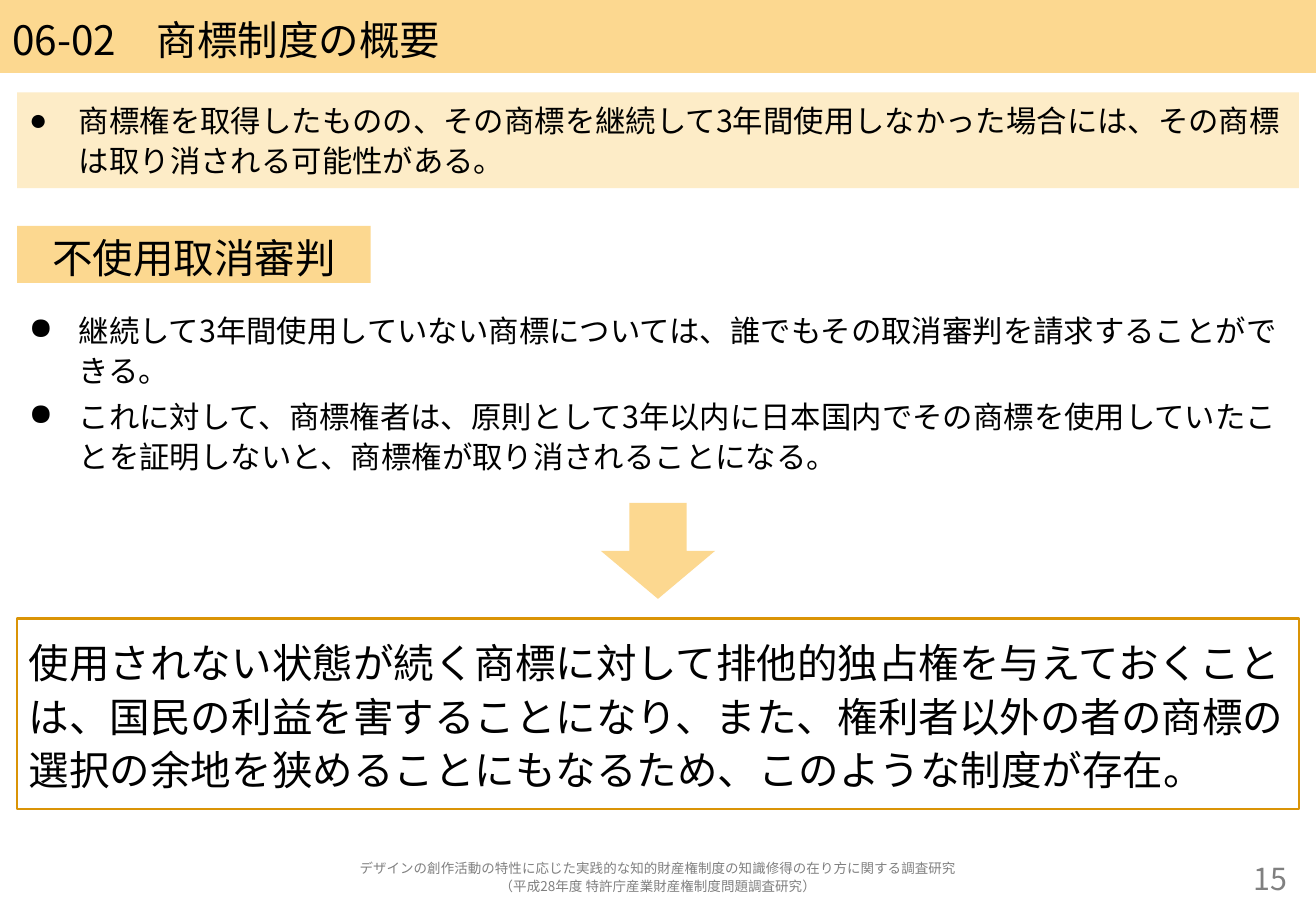
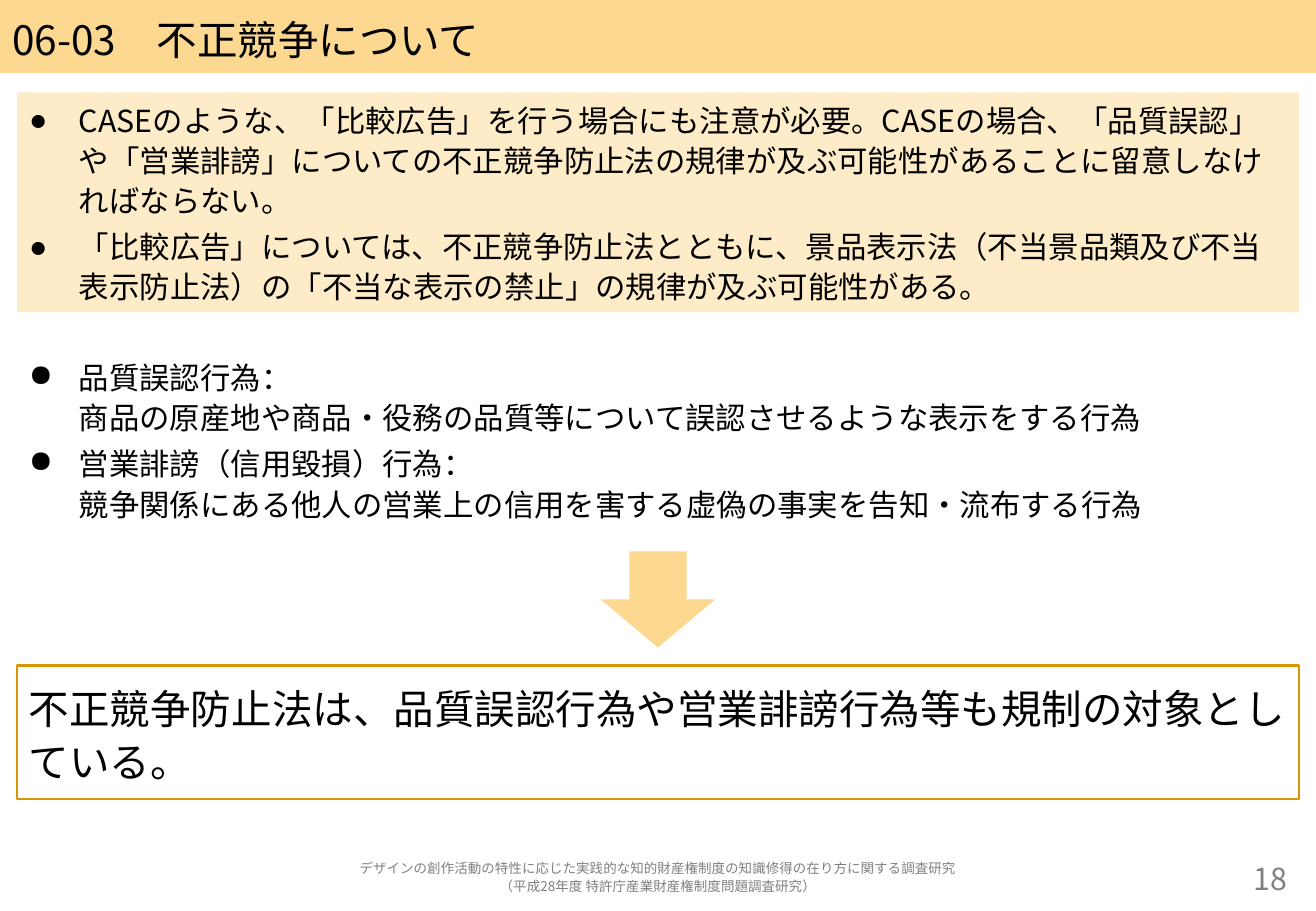
from dataclasses import dataclass

from lxml import etree
from pptx import Presentation
from pptx.dml.color import RGBColor
from pptx.enum.shapes import MSO_SHAPE
from pptx.enum.text import MSO_ANCHOR, MSO_AUTO_SIZE, PP_ALIGN
from pptx.oxml.ns import qn
from pptx.util import Inches, Pt

RECT, ARROW = MSO_SHAPE.RECTANGLE, MSO_SHAPE.DOWN_ARROW
TOP, MIDDLE = MSO_ANCHOR.TOP, MSO_ANCHOR.MIDDLE
LEFT, CENTER, RIGHT = PP_ALIGN.LEFT, PP_ALIGN.CENTER, PP_ALIGN.RIGHT
NO_FIT = MSO_AUTO_SIZE.NONE


@dataclass(frozen=True)
class Theme:
    font: str = "Noto Sans CJK JP"
    band: RGBColor = RGBColor(0xFC, 0xD8, 0x90)
    pale: RGBColor = RGBColor(0xFD, 0xEC, 0xC7)
    edge: RGBColor = RGBColor(0xDA, 0x94, 0x06)
    ink: RGBColor = RGBColor(0, 0, 0)
    gray: RGBColor = RGBColor(0x80, 0x80, 0x80)
    large: int = 24
    body: int = 18
    small: int = 8
    lines: float = 1.1


theme = Theme()
WIDE, HIGH = 10.83, 7.5
EDGE = 0.14
SPAN = WIDE - 2 * EDGE
INDENT = Inches(0.41)
FOOT = [
    "デザインの創作活動の特性に応じた実践的な知的財産権制度の知識修得の在り方に関する調査研究",
    "（平成28年度 特許庁産業財産権制度問題調査研究）",
]

# Tops and heights follow the amount of text on each slide
pages = [
    dict(
        title="06-02　商標制度の概要", number="15",
        lead=["商標権を取得したものの、その商標を継続して3年間使用しなかった場合には、その商標は取り消される可能性がある。"],
        lead_high=0.79, label="不使用取消審判",
        points=[
            "継続して3年間使用していない商標については、誰でもその取消審判を請求することができる。",
            "これに対して、商標権者は、原則として3年以内に日本国内でその商標を使用していたことを証明しないと、商標権が取り消されることになる。",
        ],
        points_top=2.49, arrow_top=4.14, box_top=5.09, box_high=1.57,
        box="使用されない状態が続く商標に対して排他的独占権を与えておくことは、国民の利益を害することになり、また、権利者以外の者の商標の選択の余地を狭めることにもなるため、このような制度が存在。",
    ),
    dict(
        title="06-03　不正競争について", number="18",
        lead=[
            "CASEのような、「比較広告」を行う場合にも注意が必要。CASEの場合、「品質誤認」や「営業誹謗」についての不正競争防止法の規律が及ぶ可能性があることに留意しなければならない。",
            "「比較広告」については、不正競争防止法とともに、景品表示法（不当景品類及び不当表示防止法）の「不当な表示の禁止」の規律が及ぶ可能性がある。",
        ],
        lead_high=1.81, label=None,
        points=[
            "品質誤認行為：\n商品の原産地や商品・役務の品質等について誤認させるような表示をする行為",
            "営業誹謗（信用毀損）行為：\n競争関係にある他人の営業上の信用を害する虚偽の事実を告知・流布する行為",
        ],
        points_top=2.88, arrow_top=4.54, box_top=5.48, box_high=1.1,
        box="不正競争防止法は、品質誤認行為や営業誹謗行為等も規制の対象としている。",
    ),
]


def write(shape, texts, size=theme.body, color=theme.ink, align=LEFT, anchor=MIDDLE, bullet=False):
    frame = shape.text_frame
    frame.auto_size = NO_FIT
    frame.word_wrap = True
    frame.vertical_anchor = anchor
    for i, text in enumerate(texts):
        para = frame.add_paragraph() if i else frame.paragraphs[0]
        para.text = text
        para.alignment = align
        para.line_spacing = theme.lines
        para.space_before = Pt(size * 0.2 if bullet else 0)
        props = para._p.get_or_add_pPr()
        if bullet:
            props.set("marL", str(INDENT))
            props.set("indent", str(-INDENT))
            etree.SubElement(props, qn("a:buChar"), char="●")
        for run in para.runs:
            font = run.font
            font.name, font.size, font.color.rgb = theme.font, Pt(size), color
            etree.SubElement(font._element, qn("a:ea"), typeface=theme.font)


def place(shape, left, top, width, height, fill=None, line=None):
    shape.left, shape.top = Inches(left), Inches(top)
    shape.width, shape.height = Inches(width), Inches(height)
    shape.shadow.inherit = False
    if fill is None:
        shape.fill.background()
    else:
        shape.fill.solid()
        shape.fill.fore_color.rgb = fill
    if line is None:
        shape.line.fill.background()
    else:
        shape.line.color.rgb, shape.line.width = line, Pt(1.5)
    return shape


deck = Presentation()
deck.slide_width, deck.slide_height = Inches(WIDE), Inches(HIGH)

for page in pages:
    slide = deck.slides.add_slide(deck.slide_layouts[1])
    shapes = slide.shapes

    # Title band and lead
    title = place(shapes.title, 0, 0, WIDE, 0.6, theme.band)
    write(title, [page["title"]], size=theme.large)
    lead = place(slide.placeholders[1], EDGE, 0.76, SPAN, page["lead_high"], theme.pale)
    write(lead, page["lead"], anchor=TOP, bullet=True)

    # Section label
    if page["label"]:
        label = place(shapes.add_shape(RECT, 0, 0, 0, 0), EDGE, 1.86, 2.91, 0.47, theme.band)
        write(label, [page["label"]], size=theme.large, align=CENTER)

    # Points
    points = place(shapes.add_textbox(0, 0, 0, 0), EDGE, page["points_top"], SPAN, 1.5)
    write(points, page["points"], anchor=TOP, bullet=True)

    # Arrow to the conclusion
    place(shapes.add_shape(ARROW, 0, 0, 0, 0), (WIDE - 0.94) / 2, page["arrow_top"], 0.94, 0.79, theme.band)
    box = place(shapes.add_shape(RECT, 0, 0, 0, 0), EDGE, page["box_top"], SPAN, page["box_high"], line=theme.edge)
    write(box, [page["box"]], size=theme.large)

    # Footer and page number
    foot = place(shapes.add_textbox(0, 0, 0, 0), EDGE, 7.06, SPAN, 0.31)
    write(foot, FOOT, size=theme.small, color=theme.gray, align=CENTER)
    number = place(shapes.add_textbox(0, 0, 0, 0), WIDE - EDGE - 1.34, 7.06, 1.34, 0.31)
    write(number, [page["number"]], color=theme.gray, align=RIGHT)

deck.save("out.pptx")
